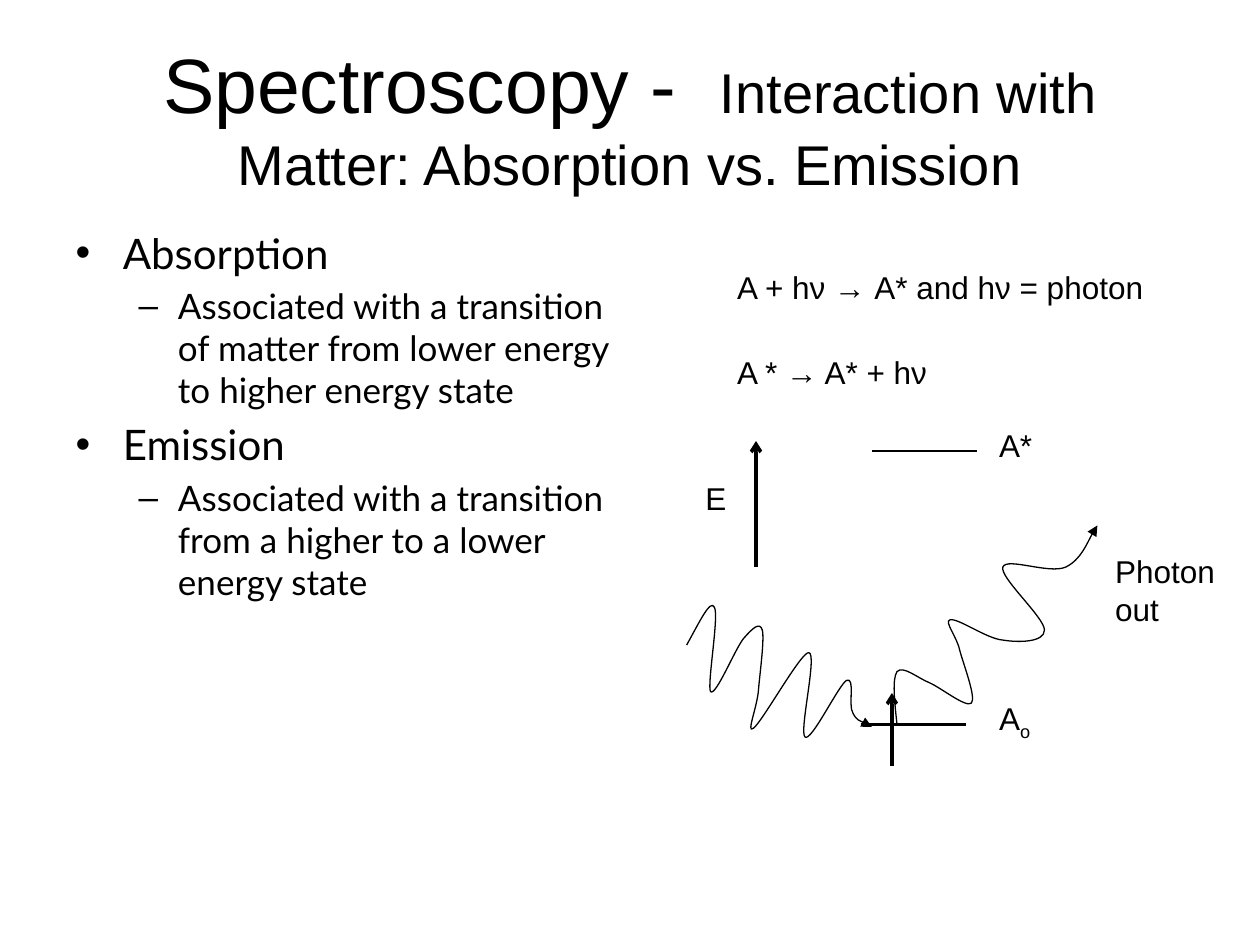
"""Build a slide on absorption and emission in spectroscopy."""
from dataclasses import dataclass

import lxml.etree
import pptx
import pptx.dml.color
import pptx.enum.shapes
import pptx.enum.text
import pptx.oxml.ns
import pptx.util

Cm = pptx.util.Cm
qn = pptx.oxml.ns.qn


@dataclass(frozen=True)
class Theme:
    ink: pptx.dml.color.RGBColor = pptx.dml.color.RGBColor(0, 0, 0)
    display_font: str = "Arial"
    list_font: str = "Lato"
    title_size: float = 44
    subtitle_size: float = 32
    list_sizes: tuple[float, ...] = (24, 20)
    label_size: float = 18
    axis_width: float = 2
    level_width: float = 1.5
    wave_width: float = 0.75


@dataclass(frozen=True)
class Label:
    text: str
    left: float
    top: float
    width: float
    height: float = 1.02
    subscript: str = ""


@dataclass(frozen=True)
class Line:
    start: tuple[float, float]
    end: tuple[float, float]
    width: float
    arrowhead: str = ""


@dataclass(frozen=True)
class Wave:
    points: tuple[tuple[int, int], ...]


THEME = Theme()
WAVE_UNIT = Cm(0.0254)

TITLE = (("Spectroscopy -  ", THEME.title_size),
         ("Interaction with Matter: Absorption vs. Emission", THEME.subtitle_size))

BULLETS = (
    (0, "Absorption"),
    (1, "Associated with a transition of matter from lower energy to higher energy state"),
    (0, "Emission"),
    (1, "Associated with a transition from a higher to a lower energy state"),
)

LABELS = (
    Label("E", 13.97, 9.53, 0.84),
    Label("A", 19.89, 13.97, 1.7, subscript="o"),
    Label("A*", 19.89, 8.46, 1.7),
    Label("A + hν → A* and hν = photon", 14.61, 5.28, 9.09),
    Label("A * → A* + hν", 14.61, 6.99, 5.72),
    Label("Photon out", 22.23, 11, 2.54, 1.78),
)

LINES = (
    Line((15.24, 11.43), (15.24, 8.89), THEME.axis_width, "arrow"),
    Line((17.35, 14.61), (19.48, 14.61), THEME.level_width),
    Line((17.58, 9.09), (19.69, 9.09), THEME.level_width),
    Line((17.98, 15.44), (17.98, 13.97), THEME.axis_width, "arrow"),
)

PHOTON_IN = Wave((
    (545, 512), (555, 494), (564, 475), (567, 482), (571, 488), (561, 544), (564, 549),
    (568, 553), (583, 516), (590, 507), (597, 499), (603, 493), (605, 500),
    (607, 507), (603, 535), (602, 548), (601, 561), (592, 583), (598, 578),
    (605, 573), (636, 517), (642, 518), (649, 519), (634, 581), (639, 585),
    (644, 589), (666, 543), (672, 540), (679, 537), (673, 560), (677, 566),
    (680, 572), (689, 575), (692, 577),
))
PHOTON_OUT = Wave((
    (712, 575), (710, 557), (708, 539), (712, 533), (717, 528), (728, 538), (738, 542),
    (747, 546), (767, 562), (771, 558), (775, 554), (765, 528), (762, 517),
    (760, 506), (749, 493), (754, 492), (760, 490), (783, 507), (796, 508),
    (808, 510), (829, 510), (829, 500), (829, 490), (793, 458), (796, 450),
    (799, 442), (833, 456), (846, 450), (858, 444), (867, 422), (871, 417),
))


def place(box, left: float, top: float, width: float, height: float) -> None:
    """Move and size a box in centimetres."""
    box.left, box.top, box.width, box.height = map(Cm, (left, top, width, height))


def format_span(span, font: str, size: float) -> None:
    """Apply typeface, size and ink to a run."""
    span.font.name = font
    span.font.size = pptx.util.Pt(size)
    span.font.color.rgb = THEME.ink


def format_line(shape, width: float, arrowhead: str) -> None:
    """Apply ink, width and an optional arrowhead to an outline."""
    shape.line.color.rgb = THEME.ink
    shape.line.width = pptx.util.Pt(width)
    if arrowhead:
        outline = shape.element.spPr.find(qn("a:ln"))
        lxml.etree.SubElement(outline, qn("a:tailEnd"), type=arrowhead)


def fill_title(box) -> None:
    """Write the two-size title."""
    place(box, 1.27, 0.76, 22.86, 3.18)
    para = box.text_frame.paragraphs[0]
    for text, size in TITLE:
        span = para.add_run()
        span.text = text
        format_span(span, THEME.display_font, size)


def fill_list(box) -> None:
    """Write the two-level bullet list."""
    place(box, 1.27, 4.45, 11.43, 12.57)
    frame = box.text_frame
    frame.text = "\n".join(text for _, text in BULLETS)
    frame.auto_size = pptx.enum.text.MSO_AUTO_SIZE.NONE
    for para, (level, _) in zip(frame.paragraphs, BULLETS):
        para.level = level
        format_span(para.runs[0], THEME.list_font, THEME.list_sizes[level])


def draw_label(page, label: Label) -> None:
    """Add a text label with an optional subscript."""
    box = page.shapes.add_textbox(
        *map(Cm, (label.left, label.top, label.width, label.height)))
    frame = box.text_frame
    frame.text = label.text
    frame.word_wrap = True
    frame.auto_size = pptx.enum.text.MSO_AUTO_SIZE.SHAPE_TO_FIT_TEXT
    para = frame.paragraphs[0]
    if label.subscript:
        para.add_run().text = label.subscript
    for span in para.runs:
        format_span(span, THEME.display_font, THEME.label_size)
    if label.subscript:
        list(box.element.iter(qn("a:rPr")))[-1].set("baseline", "-25000")


def draw_line(page, line: Line) -> None:
    """Add a straight line without a shadow."""
    connector = page.shapes.add_connector(
        pptx.enum.shapes.MSO_CONNECTOR.STRAIGHT, *map(Cm, line.start + line.end))
    format_line(connector, line.width, line.arrowhead)
    lxml.etree.SubElement(connector.element.spPr, qn("a:effectLst"))


def draw_wave(page, wave: Wave) -> None:
    """Add an open curve whose points after the first form Bézier triples."""
    builder = page.shapes.build_freeform(*wave.points[0], scale=WAVE_UNIT)
    builder.add_line_segments(wave.points[1:], close=False)
    shape = builder.convert_to_shape()
    segments = list(shape.element.iter(qn("a:lnTo")))
    outline = segments[0].getparent()
    for first in range(0, len(segments), 3):
        curve = lxml.etree.SubElement(outline, qn("a:cubicBezTo"))
        for segment in segments[first:first + 3]:
            curve.append(segment[0])
            outline.remove(segment)
    shape.fill.background()
    format_line(shape, THEME.wave_width, "triangle")
    shape.shadow.inherit = False


def main() -> None:
    """Assemble and save the deck."""
    deck = pptx.Presentation()
    deck.slide_width, deck.slide_height = Cm(25.4), Cm(19.05)
    page = deck.slides.add_slide(deck.slide_layouts[1])
    fill_title(page.shapes.title)
    fill_list(page.placeholders[1])
    for label in LABELS:
        draw_label(page, label)
    for line in LINES:
        draw_line(page, line)
    for wave in (PHOTON_IN, PHOTON_OUT):
        draw_wave(page, wave)
    deck.save("out.pptx")


if __name__ == "__main__":
    main()
